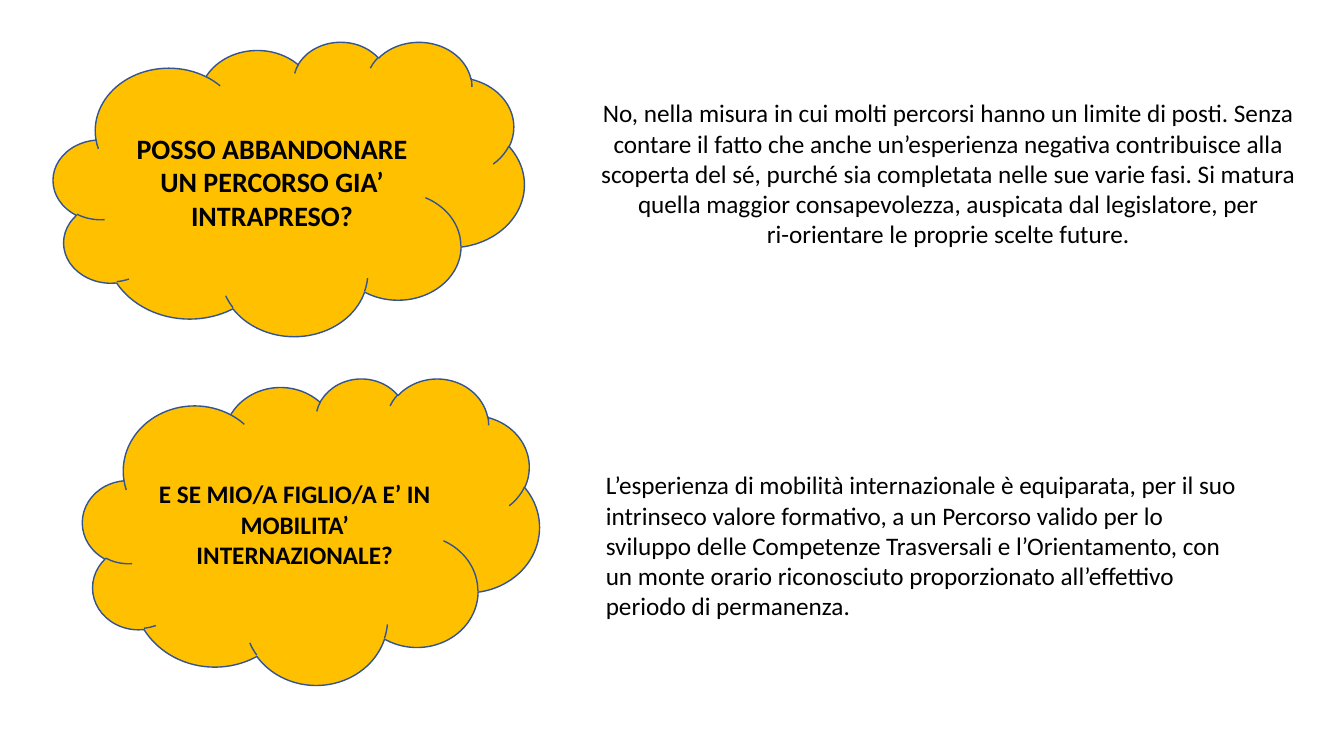
from pptx import Presentation
from pptx.dml.color import RGBColor
from pptx.enum.shapes import MSO_SHAPE
from pptx.enum.text import MSO_ANCHOR, MSO_AUTO_SIZE, PP_ALIGN
from pptx.util import Emu, Pt

PX = 9144  # EMU per px, 100 px to the inch
FONT = "Calibri"
BLACK = RGBColor(0x00, 0x00, 0x00)
AMBER = RGBColor(0xFF, 0xC0, 0x00)
BLUE = RGBColor(0x32, 0x54, 0x91)


def px(*lengths):
    return [Emu(n * PX) for n in lengths]


def write(tf, *paragraphs, size=18, bold=False, align=PP_ALIGN.LEFT):
    tf.word_wrap = True
    for i, text in enumerate(paragraphs):
        p = tf.add_paragraph() if i else tf.paragraphs[0]
        p.alignment = align
        r = p.add_run()
        r.text = text
        r.font.name = FONT
        r.font.size = Pt(size)
        r.font.bold = bold
        r.font.color.rgb = BLACK


def add_question(s, box, text, size):
    cloud = s.shapes.add_shape(MSO_SHAPE.CLOUD, *px(*box))
    cloud.shadow.inherit = False
    cloud.fill.solid()
    cloud.fill.fore_color.rgb = AMBER
    cloud.line.color.rgb = BLUE
    cloud.line.width = Pt(1)
    cloud.text_frame.vertical_anchor = MSO_ANCHOR.MIDDLE
    write(cloud.text_frame, text, size=size, bold=True, align=PP_ALIGN.CENTER)


def add_answer(s, box, *paragraphs, align=PP_ALIGN.LEFT):
    tf = s.shapes.add_textbox(*px(*box)).text_frame
    write(tf, *paragraphs, align=align)
    tf.auto_size = MSO_AUTO_SIZE.SHAPE_TO_FIT_TEXT


def main():
    prs = Presentation()
    prs.slide_width, prs.slide_height = px(1333, 750)
    s = prs.slides.add_slide(prs.slide_layouts[6])

    add_question(s, (53, 41, 467, 292),
                 "POSSO ABBANDONARE UN PERCORSO GIA’ INTRAPRESO?", size=20)
    add_answer(s, (580, 92, 721, 162),
               "No, nella misura in cui molti percorsi hanno un limite di posti. "
               "Senza contare il fatto che anche un’esperienza negativa contribuisce "
               "alla scoperta del sé, purché sia completata nelle sue varie fasi. "
               "Si matura quella maggior consapevolezza, auspicata dal legislatore, per",
               "ri-orientare le proprie scelte future.",
               align=PP_ALIGN.CENTER)

    add_question(s, (82, 375, 453, 304),
                 "E SE MIO/A FIGLIO/A E’ IN MOBILITA’ INTERNAZIONALE?", size=18)
    add_answer(s, (591, 461, 661, 162),
               "L’esperienza di mobilità internazionale è equiparata, per il suo "
               "intrinseco valore formativo, a un Percorso valido per lo sviluppo "
               "delle Competenze Trasversali e l’Orientamento, con un monte orario "
               "riconosciuto proporzionato all’effettivo periodo di permanenza.")

    prs.save("out.pptx")


if __name__ == "__main__":
    main()
